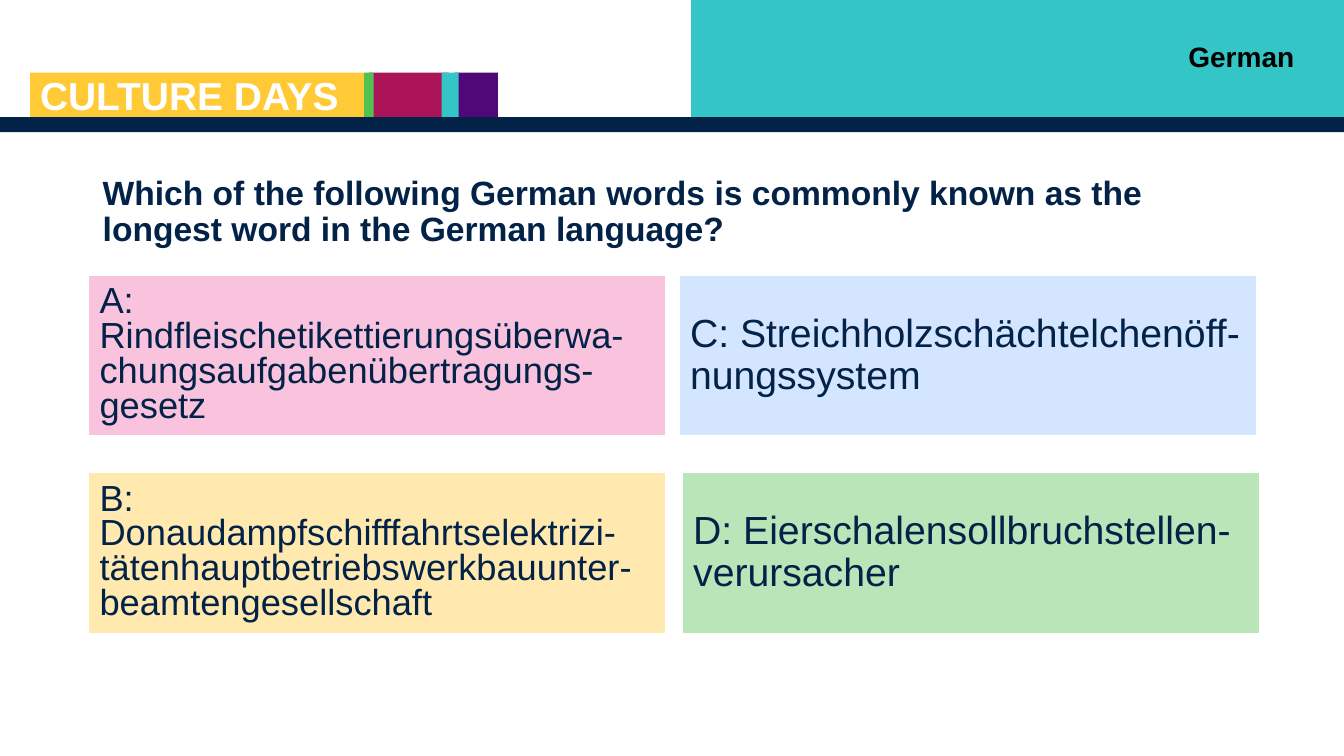
import pptx
import pptx.dml.color
import pptx.enum.shapes
import pptx.enum.text
import pptx.util

Cm = pptx.util.Cm
ALIGN = pptx.enum.text.PP_ALIGN
ANCHOR = pptx.enum.text.MSO_ANCHOR
NAVY = "032248"
TEAL = "34C6C6"


def color(value):
    return pptx.dml.color.RGBColor.from_string(value)


class QuizSlide:
    font_name = "Arial"

    def __init__(self, slide):
        self.slide = slide

    def rectangle(self, left, top, width, height, fill, outlined=False):
        shape = self.slide.shapes.add_shape(
            pptx.enum.shapes.MSO_SHAPE.RECTANGLE, Cm(left), Cm(top), Cm(width), Cm(height))
        shape.shadow.inherit = False
        shape.fill.solid()
        shape.fill.fore_color.rgb = color(fill)
        if outlined:
            shape.line.color.rgb = color(fill)
            shape.line.width = pptx.util.Pt(0.75)
        else:
            shape.line.fill.background()
        return shape

    def set_text(self, shape, text, size, ink=NAVY, bold=False, spacing=1.0,
                 align=ALIGN.LEFT, anchor=ANCHOR.MIDDLE):
        frame = shape.text_frame
        frame.word_wrap = True
        frame.vertical_anchor = anchor
        paragraph = frame.paragraphs[0]
        paragraph.text = text
        paragraph.alignment = align
        paragraph.line_spacing = spacing
        paragraph.font.name = self.font_name
        paragraph.font.size = pptx.util.Pt(size)
        paragraph.font.bold = bold
        paragraph.font.color.rgb = color(ink)

    def label(self, left, top, width, height, text, size, **style):
        box = self.slide.shapes.add_textbox(Cm(left), Cm(top), Cm(width), Cm(height))
        self.set_text(box, text, size, **style)

    def answer(self, left, top, fill, text, size, spacing):
        card = self.rectangle(left, top, 14.5, 3.99, fill, outlined=True)
        self.set_text(card, text, size, spacing=spacing)


def main():
    presentation = pptx.Presentation()
    presentation.slide_width = Cm(33.87)
    presentation.slide_height = Cm(19.05)
    quiz = QuizSlide(presentation.slides.add_slide(presentation.slide_layouts[6]))

    quiz.rectangle(17.42, 0, 16.45, 2.95, TEAL)
    quiz.rectangle(0, 2.95, 33.87, 0.38, NAVY)
    stripes = [
        (11.46, 1.09, "500778"),
        (9.3, 2.01, "AC145A"),
        (11.13, 0.43, TEAL),
        (9.17, 0.25, "52C152"),
        (0.76, 8.41, "FFCA36"),
    ]
    for left, width, fill in stripes:
        quiz.rectangle(left, 1.83, width, 1.12, fill)
    quiz.label(0.76, 1.9, 10.54, 1.22, "CULTURE DAYS", 27.8, ink="FFFFFF",
               bold=True, spacing=0.8, anchor=ANCHOR.TOP)

    quiz.label(2.34, 4.22, 29.21, 2.29,
               "Which of the following German words is commonly known as the "
               "longest word in the German language?", 24, bold=True, spacing=0.9)

    upper, lower = 6.97, 11.94
    answers = [
        (2.26, upper, "F9C3DD",
         "A: Rindfleischetikettierungsüberwa-chungsaufgabenübertragungs-gesetz", 25.9, 0.8),
        (17.14, upper, "D3E5FF", "C: Streichholzschächtelchenöff-nungssystem", 28, 0.9),
        (2.26, lower, "FFE9AE",
         "B: Donaudampfschifffahrtselektrizi-tätenhauptbetriebswerkbauunter-beamtengesellschaft",
         25.9, 0.8),
        (17.22, lower, "B9E5B9", "D: Eierschalensollbruchstellen-verursacher", 28, 0.9),
    ]
    for answer in answers:
        quiz.answer(*answer)

    quiz.label(19.33, 0.86, 13.54, 1.12, "German", 20, ink="000000", bold=True,
               align=ALIGN.RIGHT, anchor=ANCHOR.TOP)
    presentation.save("out.pptx")


if __name__ == "__main__":
    main()
